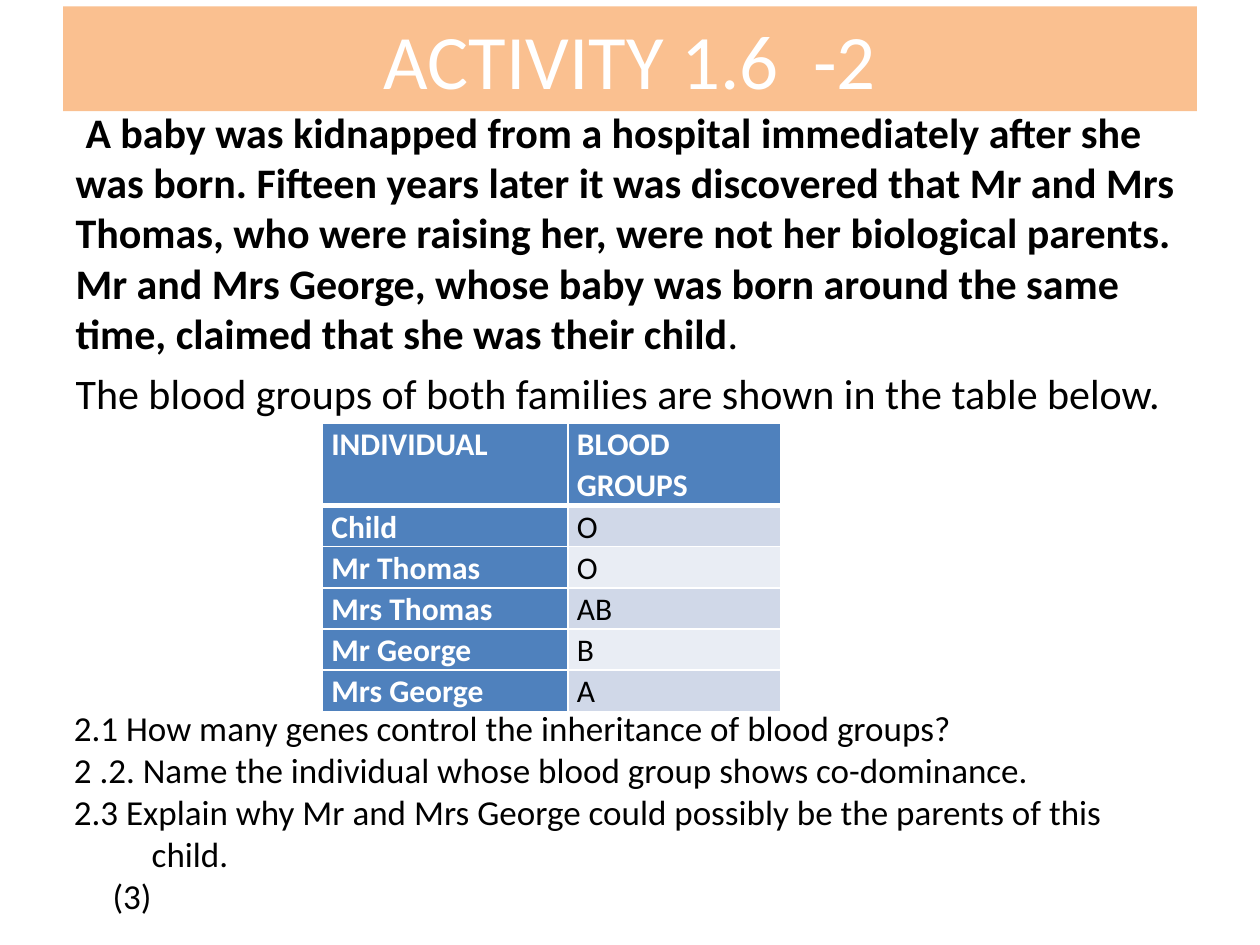
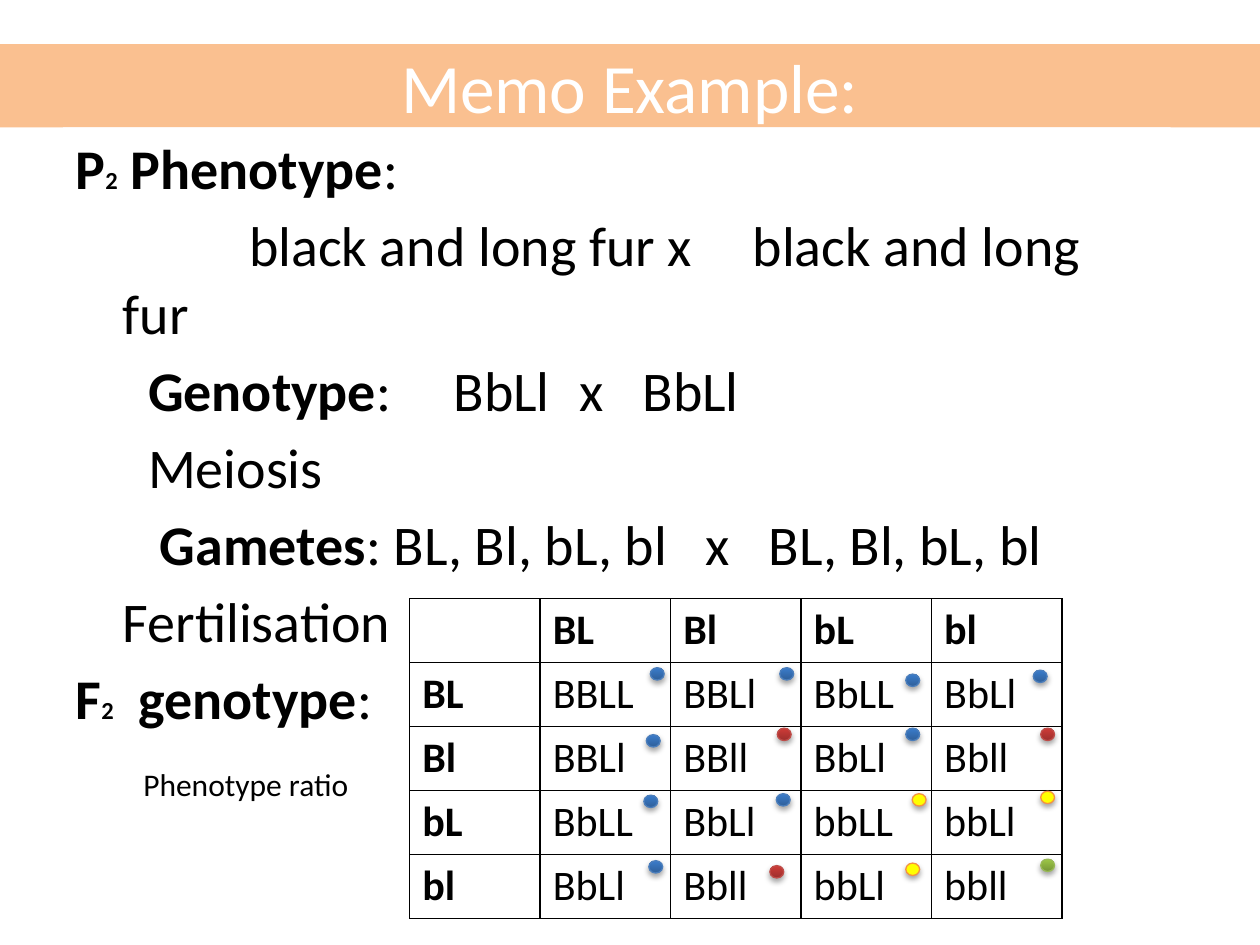
"""Build two genetics slides: a blood group activity and a dihybrid cross memo."""
from lxml.etree import SubElement
from pptx import Presentation
from pptx.dml.color import RGBColor
from pptx.enum.shapes import MSO_SHAPE
from pptx.enum.text import MSO_ANCHOR, MSO_AUTO_SIZE, PP_ALIGN
from pptx.oxml.ns import qn
from pptx.util import Cm, Pt

COLOURS = {
    "band": "FAC090", "white": "FFFFFF", "black": "000000", "header": "4F81BD",
    "odd": "D0D8E8", "even": "E9EDF4",
}
DOT_COLOURS = {
    "blue": ("2F5F99", "3A7CCB", "4B7EBC"),
    "green": ("779737", "9DC746", "98B955"),
    "red": ("9C2F2D", "CE3B37", "BF4C48"),
    "yellow": ("FFFF00", "FFFF00", "F69240"),
}
BOLD = {"bold": True}
SUBSCRIPT = {"bold": True, "size": Pt(14)}


class SlideBuilder:
    """Hold the shared style and the current slide."""

    def __init__(self):
        """Start an empty 4:3 deck."""
        self.deck = Presentation()
        self.deck.slide_width, self.deck.slide_height = Cm(25.4), Cm(19.05)
        self.page = None

    def colour(self, name):
        """Return a named or hex colour."""
        return RGBColor.from_string(COLOURS.get(name, name))

    def apply(self, target, values):
        """Set each attribute in a dict of format values."""
        for name, value in values.items():
            setattr(target, name, value)

    def add_page(self):
        """Add a title and content slide."""
        self.page = self.deck.slides.add_slide(self.deck.slide_layouts[1])

    def place(self, shape, area):
        """Move a shape to left, top, width, height in centimetres."""
        self.apply(shape, dict(zip(("left", "top", "width", "height"), map(Cm, area))))

    def paint(self, shape, name):
        """Fill a shape with one colour."""
        shape.fill.solid()
        shape.fill.fore_color.rgb = self.colour(name)

    def add_spans(self, para, spans, size, name="black", **values):
        """Add spans of (text, format) or a plain string to a paragraph."""
        for text, extra in [(spans, {})] if isinstance(spans, str) else spans:
            span = para.add_run()
            span.text = text
            self.apply(span.font, {"name": "Calibri", "size": Pt(size), **values, **extra})
            span.font.color.rgb = self.colour(name)

    def layout_para(self, para, left=0, first=0, tabs=()):
        """Set indents, no bullet and tab stops in centimetres."""
        properties = para._p.get_or_add_pPr()
        properties.set("marL", str(Cm(left)))
        properties.set("indent", str(Cm(first - left)))
        SubElement(properties, qn("a:buNone"))
        if tabs:
            stops = SubElement(properties, qn("a:tabLst"))
            for tab in tabs:
                SubElement(stops, qn("a:tab"), pos=str(Cm(tab)), algn="l")

    def fill_frame(self, frame, lines, size, gap=0):
        """Put lines of (spans, paragraph layout) in a text frame."""
        for index, (spans, layout) in enumerate(lines):
            para = frame.add_paragraph() if index else frame.paragraphs[0]
            self.layout_para(para, **layout)
            para.space_before = Pt(gap if index else 0)
            self.add_spans(para, spans, size)

    def title(self, text, area, size):
        """Turn the title placeholder into a coloured band."""
        title = self.page.shapes.title
        self.place(title, area)
        self.paint(title, "band")
        self.apply(title.text_frame, {"auto_size": MSO_AUTO_SIZE.NONE,
                                      "vertical_anchor": MSO_ANCHOR.MIDDLE})
        para = title.text_frame.paragraphs[0]
        para.alignment = PP_ALIGN.CENTER
        self.add_spans(para, text, size, "white")

    def body(self, lines, area, size):
        """Fill the body placeholder."""
        body = self.page.placeholders[1]
        self.place(body, area)
        body.text_frame.auto_size = MSO_AUTO_SIZE.NONE
        self.fill_frame(body.text_frame, lines, size, gap=5.6)
        return body

    def text_box(self, lines, area, size, wrap=True):
        """Add a plain text box."""
        box = self.page.shapes.add_textbox(*map(Cm, area))
        box.text_frame.word_wrap = wrap
        self.fill_frame(box.text_frame, lines, size)

    def table(self, rows, corner, widths, heights):
        """Add an unstyled table and return its cells with row and column."""
        area = (*corner, sum(widths), sum(heights))
        table = self.page.shapes.add_table(len(rows), len(widths), *map(Cm, area)).table
        self.apply(table, {"first_row": False, "horz_banding": False})
        for column, width in zip(table.columns, widths):
            column.width = Cm(width)
        for row, height in zip(table.rows, heights):
            row.height = Cm(height)
        return [(table.cell(r, c), r, c, text)
                for r, row in enumerate(rows) for c, text in enumerate(row)]

    def borders(self, cell, name, **widths):
        """Draw all four cell borders, one point unless a side says otherwise."""
        properties = cell._tc.get_or_add_tcPr()
        for side in "LRTB":
            line = SubElement(properties, qn(f"a:ln{side}"), w=str(Pt(widths.get(side, 1))))
            fill = SubElement(line, qn("a:solidFill"))
            SubElement(fill, qn("a:srgbClr"), val=COLOURS[name])

    def dot(self, kind, left, top):
        """Add a small shaded phenotype marker."""
        dark, light, edge = DOT_COLOURS[kind]
        dot = self.page.shapes.add_shape(MSO_SHAPE.OVAL, *map(Cm, (left, top, 0.28, 0.25)))
        dot.fill.gradient()
        dot.fill.gradient_angle = 90
        for stop, name in zip(dot.fill.gradient_stops, (dark, light)):
            stop.color.rgb = self.colour(name)
        dot.line.color.rgb = self.colour(edge)
        dot.line.width = Pt(0.75)
        effects = SubElement(dot._element.spPr, qn("a:effectLst"))
        shadow = SubElement(effects, qn("a:outerShdw"), blurRad=str(Pt(3.1)),
                            dist=str(Pt(1.8)), dir="5400000", rotWithShape="0")
        black = SubElement(shadow, qn("a:srgbClr"), val=COLOURS["black"])
        SubElement(black, qn("a:alpha"), val="35000")


def build_activity(builder):
    """Build the blood group activity."""
    builder.add_page()
    builder.title("ACTIVITY 1.6  -2", (1.27, 0.13, 22.86, 2.11), 44)
    story = (
        "A baby was kidnapped from a hospital immediately after she was born. "
        "Fifteen years later it was discovered that Mr and Mrs Thomas, who were "
        "raising her, were not her biological parents. Mr and Mrs George, whose "
        "baby was born around the same time, claimed that she was their child"
    )
    builder.body([
        ([(story, BOLD), (".", {})], {"first": 0.2}),
        ("The blood groups of both families are shown in the table below.", {}),
    ], (1.27, 2.01, 22.86, 15.01), 24)
    rows = [("INDIVIDUAL", "BLOOD GROUPS"), ("Child", "O"), ("Mr Thomas", "O"),
            ("Mrs Thomas", "AB"), ("Mr George", "B"), ("Mrs George", "A")]
    cells = builder.table(rows, (6.5, 8.53), (4.95, 4.29), [1.65] + [0.83] * 5)
    margins = {"margin_left": Cm(0.18), "margin_right": Cm(0.18),
               "margin_top": 0, "margin_bottom": 0}
    for cell, row, column, text in cells:
        heading = row == 0 or column == 0
        builder.apply(cell, margins)
        builder.borders(cell, "white", B=1 if row else 3, T=3 if row == 1 else 1)
        builder.paint(cell, "header" if heading else "odd" if row % 2 else "even")
        para = cell.text_frame.paragraphs[0]
        builder.apply(para, {"alignment": PP_ALIGN.JUSTIFY, "line_spacing": 1.07})
        builder.add_spans(para, text, 18, "white" if heading else "black", bold=heading)
    builder.text_box([
        ("2.1 How many genes control the inheritance of blood groups?", {}),
        ("2 .2. Name the individual whose blood group shows co-dominance.", {}),
        ("2.3 Explain why Mr and Mrs George could possibly be the parents of this", {}),
        ("child.", {"first": 1.57}),
        ("(3)", {"first": 0.78}),
    ], (1.24, 14.12, 22.61, 5.31), 20)


def build_memo(builder):
    """Build the dihybrid cross memo."""
    builder.add_page()
    builder.title("Memo Example:", (0, 0.89, 25.4, 1.68), 39.6)
    body = builder.body([
        ([("P", BOLD), ("2", SUBSCRIPT), (" Phenotype", BOLD), (":", {})], {}),
        ("black and long fur x\tblack and long fur",
         {"left": 0.95, "first": 3.5, "tabs": [13.92]}),
        ([("Genotype", BOLD), (":\tBbLl\tx\tBbLl", {})],
         {"first": 1.46, "tabs": [7.4, 11.14, 16.2]}),
        ("Meiosis", {"first": 1.46}),
        ([("Gametes", BOLD), (": BL, Bl, bL, bl\tx\tBL, Bl, bL, bl", {})],
         {"first": 1.7, "tabs": [12.47, 14.48]}),
        ("Fertilisation", {"first": 0.95}),
        ([("F", BOLD), ("2", SUBSCRIPT), ("\tgenotype", BOLD), (":", {})],
         {"tabs": [1.54]}),
    ], (1.27, 2.57, 22.33, 15.85), 32)
    builder.paint(body, "white")
    rows = [("", "BL", "Bl", "bL", "bl"),
            ("BL", "BBLL", "BBLl", "BbLL", "BbLl"),
            ("Bl", "BBLl", "BBll", "BbLl", "Bbll"),
            ("bL", "BbLL", "BbLl", "bbLL", "bbLl"),
            ("bl", "BbLl", "Bbll", "bbLl", "bbll")]
    for cell, row, column, text in builder.table(rows, (8.26, 12.07), [2.63] * 5, [1.29] * 5):
        builder.borders(cell, "black")
        cell.fill.background()
        if text:
            builder.add_spans(cell.text_frame.paragraphs[0], text, 24,
                              bold=row == 0 or column == 0)
    dots = {
        "blue": [(13.11, 13.46), (15.72, 13.46), (13.03, 14.81), (12.98, 16.03),
                 (13.08, 17.35), (18.26, 13.59), (15.65, 16), (20.83, 13.51),
                 (18.26, 14.68)],
        "green": [(20.98, 17.32)],
        "red": [(15.52, 17.45), (15.67, 14.68), (20.98, 14.68)],
        "yellow": [(20.98, 15.95), (18.39, 16), (18.26, 17.4)],
    }
    for kind, corners in dots.items():
        for corner in corners:
            builder.dot(kind, *corner)
    builder.text_box([("Phenotype ratio", {})], (2.64, 15.29, 4.7, 1.02), 18, wrap=False)


def main():
    """Build and save the deck."""
    builder = SlideBuilder()
    build_activity(builder)
    build_memo(builder)
    builder.deck.save("out.pptx")


if __name__ == "__main__":
    main()
